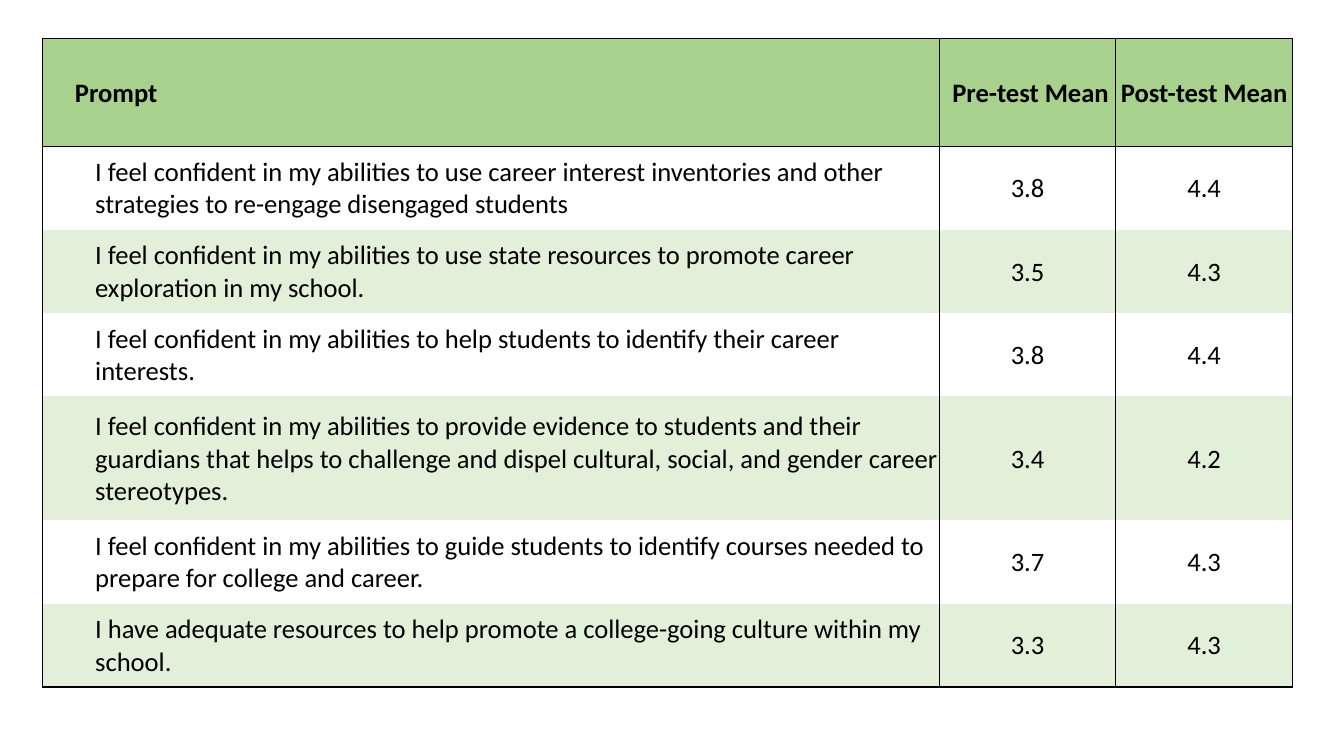
from dataclasses import dataclass

from lxml import etree
from pptx import Presentation
from pptx.dml.color import RGBColor
from pptx.enum.text import MSO_ANCHOR, PP_ALIGN
from pptx.oxml.ns import qn
from pptx.table import Table, _Cell
from pptx.util import Cm, Pt

LEFT, CENTER = PP_ALIGN.LEFT, PP_ALIGN.CENTER
MIDDLE = MSO_ANCHOR.MIDDLE

BLACK = RGBColor(0x00, 0x00, 0x00)
WHITE = RGBColor(0xFF, 0xFF, 0xFF)
HEADER_GREEN = RGBColor(0xA9, 0xD1, 0x8E)
BAND_GREEN = RGBColor(0xE2, 0xF0, 0xD9)

FONT_NAME = "Calibri"
FONT_SIZE = Pt(19)
BORDER_WIDTH = Pt(1)
CELL_MARGIN = Cm(0.03)

COLUMN_WIDTHS = (Cm(22.6), Cm(4.45), Cm(4.45))
HEADER_INDENTS = (Cm(0.79), Cm(0.15), Cm(0))
PROMPT_INDENTS = (Cm(1.3), Cm(0), Cm(0))
HEADER_HEIGHT, TWO_LINES, THREE_LINES = Cm(2.72), Cm(2.1), Cm(3.12)


@dataclass(frozen=True)
class Row:
    texts: tuple[str, str, str]
    height: int = TWO_LINES


ROWS = (
    Row(("Prompt", "Pre-test Mean", "Post-test Mean"), HEADER_HEIGHT),
    Row(("I feel confident in my abilities to use career interest inventories "
         "and other strategies to re-engage disengaged students", "3.8", "4.4")),
    Row(("I feel confident in my abilities to use state resources to promote "
         "career exploration in my school.", "3.5", "4.3")),
    Row(("I feel confident in my abilities to help students to identify their "
         "career interests.", "3.8", "4.4")),
    Row(("I feel confident in my abilities to provide evidence to students and "
         "their guardians that helps to challenge and dispel cultural, social, "
         "and gender career stereotypes.", "3.4", "4.2"), THREE_LINES),
    Row(("I feel confident in my abilities to guide students to identify courses "
         "needed to prepare for college and career.", "3.7", "4.3")),
    Row(("I have adequate resources to help promote a college-going culture "
         "within my school.", "3.3", "4.3")),
)


def set_borders(cell: _Cell, top: bool, bottom: bool) -> None:
    """Rule both sides of a cell, and its top and bottom on request."""
    properties = cell._tc.get_or_add_tcPr()
    sides = {"a:lnL": True, "a:lnR": True, "a:lnT": top, "a:lnB": bottom}
    for tag, visible in sides.items():
        line = etree.SubElement(properties, qn(tag), w=str(BORDER_WIDTH))
        if visible:
            fill = etree.SubElement(line, qn("a:solidFill"))
            etree.SubElement(fill, qn("a:srgbClr"), val=str(BLACK))
        else:
            etree.SubElement(line, qn("a:noFill"))


def write_cell(cell: _Cell, text: str, align: PP_ALIGN, indent: int, bold: bool) -> None:
    cell.margin_left = cell.margin_right = cell.margin_top = CELL_MARGIN
    cell.margin_bottom = 0
    cell.vertical_anchor = MIDDLE
    cell.text_frame.text = text
    paragraph = cell.text_frame.paragraphs[0]
    paragraph.alignment = align
    paragraph._p.get_or_add_pPr().set("marL", str(indent))
    font = paragraph.runs[0].font
    font.name, font.size, font.bold = FONT_NAME, FONT_SIZE, bold
    font.color.rgb = BLACK


def fill_row(table: Table, index: int, row: Row) -> None:
    is_header = index == 0
    table.rows[index].height = row.height
    indents = HEADER_INDENTS if is_header else PROMPT_INDENTS
    band = BAND_GREEN if index % 2 == 0 else WHITE
    for column, (text, indent) in enumerate(zip(row.texts, indents)):
        cell = table.cell(index, column)
        set_borders(cell, top=index <= 1, bottom=index in (0, len(ROWS) - 1))
        cell.fill.solid()
        cell.fill.fore_color.rgb = HEADER_GREEN if is_header else band
        write_cell(cell, text, CENTER if column else LEFT, indent, is_header)


def main() -> None:
    # Page
    deck = Presentation()
    deck.slide_width, deck.slide_height = Cm(33.87), Cm(19.05)
    blank_layout = deck.slide_layouts[6]
    page = deck.slides.add_slide(blank_layout)

    # Table of survey means
    table = page.shapes.add_table(
        len(ROWS), len(COLUMN_WIDTHS), Cm(1.07), Cm(0.97),
        sum(COLUMN_WIDTHS), sum(row.height for row in ROWS),
    ).table
    table.horz_banding = False
    for column, width in zip(table.columns, COLUMN_WIDTHS):
        column.width = width
    for index, row in enumerate(ROWS):
        fill_row(table, index, row)

    deck.save("out.pptx")


if __name__ == "__main__":
    main()
